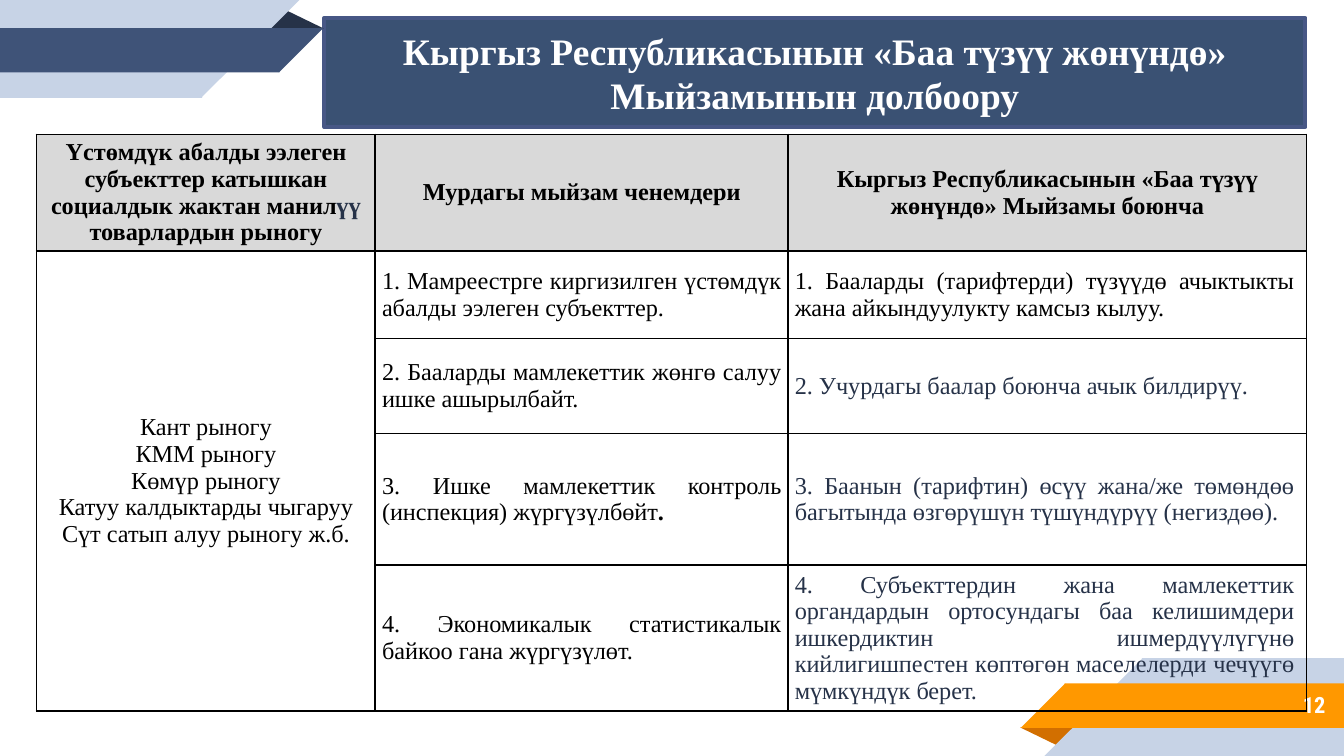
from lxml import etree
from pptx import Presentation
from pptx.dml.color import RGBColor
from pptx.enum import shapes, text
from pptx.oxml import ns
from pptx.util import Cm, Pt

COLORS = {
    "navy": "263248", "blue": "3F5378", "pale": "C7D3E6", "rust": "D26F00",
    "orange": "FF9800", "banner": "3A5173", "edge": "475785", "grey": "D9D9D9",
    "black": "000000", "white": "FFFFFF",
}
SERIF = "Times New Roman"
WIDTH, HEIGHT = 25.4, 14.29

TITLE = "Кыргыз Республикасынын «Баа түзүү жөнүндө» Мыйзамынын долбоору"
PAGE = "12"

HEADERS = [
    [("Үстөмдүк абалды ээлеген субъекттер катышкан социалдык жактан манил", "black"),
     ("үү ", "navy"), ("товарлардын рыногу", "black")],
    [("Мурдагы мыйзам ченемдери", "black")],
    [("Кыргыз Республикасынын «Баа түзүү жөнүндө» Мыйзамы боюнча", "black")],
]
MARKETS = ["Кант рыногу", "КММ рыногу", "Көмүр рыногу",
           "Катуу калдыктарды чыгаруу", "Сүт сатып алуу рыногу ж.б."]
BEFORE = [
    "1. Мамреестрге киргизилген үстөмдүк абалды ээлеген субъекттер.",
    "2. Бааларды мамлекеттик жөнгө салуу ишке ашырылбайт.",
    "3. Ишке мамлекеттик контроль (инспекция) жүргүзүлбөйт.",
    " Экономикалык статистикалык байкоо гана жүргүзүлөт.",
]
AFTER = [
    " Бааларды (тарифтерди) түзүүдө ачыктыкты жана айкындуулукту камсыз кылуу.",
    "2. Учурдагы баалар боюнча ачык билдирүү.",
    "3. Баанын (тарифтин) өсүү жана/же төмөндөө багытында өзгөрүшүн түшүндүрүү (негиздөө).",
    "4. Субъекттердин жана мамлекеттик органдардын ортосундагы баа келишимдери "
    "ишкердиктин ишмердүүлүгүнө кийлигишпестен көптөгөн маселелерди чечүүгө мүмкүндүк берет.",
]
COLUMN_WIDTHS = [6.4, 7.8, 9.8]
ROW_HEIGHTS = [2.13, 1.65, 1.8, 2.49, 2.7]

KINDS = shapes.MSO_SHAPE
RIBBON = [
    (KINDS.ISOSCELES_TRIANGLE, 5.03, 0.18, 1.09, 0.36, 0, "fold"),
    (KINDS.RECTANGLE, 0, 0, 3.82, 1.85, 180, "back"),
    (KINDS.RIGHT_TRIANGLE, 3.8, 0, 1.86, 1.85, 180, "back"),
    (KINDS.RECTANGLE, 0, 0.53, 5.28, 0.84, 180, "front"),
    (KINDS.RIGHT_TRIANGLE, 5.27, 0.53, 0.84, 0.84, 180, "front"),
]
CORNERS = [
    (False, {"fold": "navy", "back": "pale", "front": "blue"}),
    (True, {"fold": "rust", "back": "pale", "front": "orange"}),
]


def rgb(name):
    return RGBColor.from_string(COLORS[name])


def style(run, size, color, bold=False, font=SERIF):
    run.font.size, run.font.bold, run.font.name = Pt(size), bold, font
    run.font.color.rgb = rgb(color)


def add_ribbon(slide, opposite, palette):
    for kind, left, top, width, height, turn, part in RIBBON:
        if opposite:
            left, top = WIDTH - left - width, HEIGHT - top - height
            turn = (turn + 180) % 360
        piece = slide.shapes.add_shape(kind, Cm(left), Cm(top), Cm(width), Cm(height))
        piece.shadow.inherit = False
        piece.rotation = turn
        piece.fill.solid()
        piece.fill.fore_color.rgb = rgb(palette[part])
        piece.line.fill.background()
        if part == "fold":
            piece.adjustments[0] = 0.32
        else:
            piece.element.spPr.find(ns.qn("a:xfrm")).set("flipH", "1")


def add_title(slide):
    banner = slide.shapes.title
    banner.left, banner.top, banner.width, banner.height = Cm(6.13), Cm(0.34), Cm(18.54), Cm(2.06)
    banner.fill.solid()
    banner.fill.fore_color.rgb = rgb("banner")
    banner.line.color.rgb = rgb("edge")
    banner.line.width = Pt(2.25)
    frame = banner.text_frame
    frame.text = TITLE
    frame.word_wrap = True
    frame.auto_size = text.MSO_AUTO_SIZE.NONE
    frame.vertical_anchor = text.MSO_ANCHOR.MIDDLE
    frame.paragraphs[0].alignment = text.PP_ALIGN.CENTER
    style(frame.paragraphs[0].runs[0], 20, "white", True)


def add_page_number(slide):
    frame = slide.shapes.add_textbox(Cm(21.16), Cm(12.88), Cm(4.14), Cm(0.89)).text_frame
    frame.text = PAGE
    frame.word_wrap = True
    frame.vertical_anchor = text.MSO_ANCHOR.MIDDLE
    frame.paragraphs[0].alignment = text.PP_ALIGN.RIGHT
    style(frame.paragraphs[0].runs[0], 12, "white", True, "Roboto Condensed")


def add_borders(cell):
    properties = cell._tc.get_or_add_tcPr()
    for position, side in enumerate(("lnL", "lnR", "lnT", "lnB")):
        border = etree.Element(ns.qn(f"a:{side}"), w=str(Pt(1)))
        fill = etree.SubElement(border, ns.qn("a:solidFill"))
        etree.SubElement(fill, ns.qn("a:srgbClr"), val=COLORS["black"])
        properties.insert(position, border)


def number(paragraph, start):
    properties = paragraph._p.get_or_add_pPr()
    color = etree.SubElement(properties, ns.qn("a:buClr"))
    etree.SubElement(color, ns.qn("a:srgbClr"), val=COLORS["black"])
    etree.SubElement(properties, ns.qn("a:buFont"), typeface=SERIF)
    etree.SubElement(properties, ns.qn("a:buAutoNum"), type="arabicPeriod", startAt=str(start))


def fill_cell(cell, lines, alignment, bold=False):
    frame = cell.text_frame
    for index, pieces in enumerate(lines):
        paragraph = frame.add_paragraph() if index else frame.paragraphs[0]
        paragraph.alignment = alignment
        paragraph.line_spacing = 1.0
        for wording, color in pieces:
            run = paragraph.add_run()
            run.text = wording
            style(run, 13, color, bold)


def add_comparison(slide):
    table = slide.shapes.add_table(
        len(ROW_HEIGHTS), len(COLUMN_WIDTHS), Cm(0.69), Cm(2.54),
        Cm(sum(COLUMN_WIDTHS)), Cm(sum(ROW_HEIGHTS))).table
    for column, width in zip(table.columns, COLUMN_WIDTHS):
        column.width = Cm(width)
    for row, height in zip(table.rows, ROW_HEIGHTS):
        row.height = Cm(height)
    for index, cell in enumerate(table.iter_cells()):
        cell.margin_left = cell.margin_right = Cm(0.13)
        cell.margin_top = cell.margin_bottom = 0
        cell.vertical_anchor = text.MSO_ANCHOR.MIDDLE
        if index < len(HEADERS):
            cell.fill.solid()
            cell.fill.fore_color.rgb = rgb("grey")
        else:
            cell.fill.background()
        add_borders(cell)
    table.cell(1, 0).merge(table.cell(len(ROW_HEIGHTS) - 1, 0))

    center, justify = text.PP_ALIGN.CENTER, text.PP_ALIGN.JUSTIFY
    for column, heading in enumerate(HEADERS):
        fill_cell(table.cell(0, column), [heading], center, True)
    fill_cell(table.cell(1, 0), [[(market, "black")] for market in MARKETS], center)
    for row, norms in enumerate(zip(BEFORE, AFTER), 1):
        table.cell(row, 2).margin_right = Cm(0.24)
        for column, norm in enumerate(norms, 1):
            color = "navy" if column == 2 and row > 1 else "black"
            pieces = [(norm[:-1], color), (".", color)] if (row, column) == (3, 1) else [(norm, color)]
            cell = table.cell(row, column)
            fill_cell(cell, [pieces], justify)
            paragraph = cell.text_frame.paragraphs[0]
            if len(pieces) > 1:
                paragraph.runs[-1].font.bold = True
            if norm.startswith(" "):
                number(paragraph, row)


def main():
    deck = Presentation()
    deck.slide_width, deck.slide_height = Cm(WIDTH), Cm(HEIGHT)
    slide = deck.slides.add_slide(deck.slide_layouts[5])
    for opposite, palette in CORNERS:
        add_ribbon(slide, opposite, palette)
    add_page_number(slide)
    add_title(slide)
    add_comparison(slide)
    deck.save("out.pptx")


if __name__ == "__main__":
    main()
